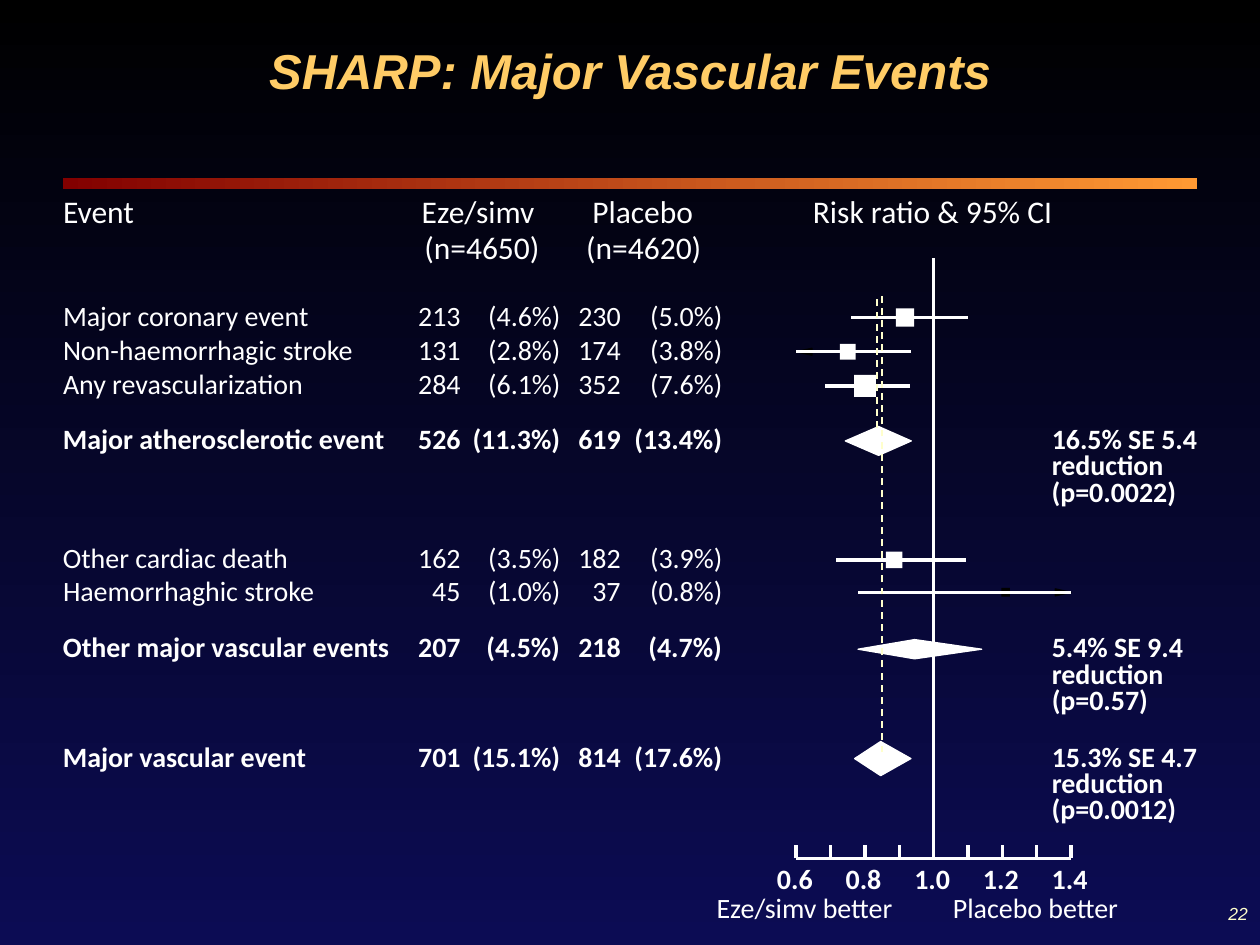
"""Build a forest plot slide of major vascular events."""
from lxml import etree
from pptx import Presentation
from pptx.dml.color import RGBColor
from pptx.enum.dml import MSO_LINE
from pptx.enum.shapes import MSO_CONNECTOR, MSO_SHAPE
from pptx.enum.text import MSO_ANCHOR, PP_ALIGN
from pptx.oxml.ns import qn
from pptx.util import Pt

COLORS = {"white": "FFFFFF", "black": "000000", "navy": "0C0C54", "maroon": "820000",
          "orange": "FF9933", "gold": "FFCC66", "cream": "FFFFCC"}

TITLE = "SHARP: Major Vascular Events"
HEADERS = [("Risk ratio & 95% CI", 464.5, 110, 137.5), ("Event", 36, 110, 43),
           ("Placebo", 338.5, 110, 60), ("Eze/simv", 241, 110, 66),
           ("(n=4620)", 335, 130.5, 66.5), ("(n=4650)", 242.5, 130.5, 66.5)]

# label, label width, top, four cells, (low, ratio, high), marker size, marker kind, reduction
EVENTS = [
    ("Major coronary event", 145.5, 170.5, ("213", "(4.6%)", "230", "(5.0%)"),
     (0.76, 0.917, 1.1), 10.5, "square", ()),
    ("Non-haemorrhagic stroke", 170.5, 190, ("131", "(2.8%)", "174", "(3.8%)"),
     (0.6, 0.75, 0.935), 9, "square", ()),
    ("Any revascularization", 142.5, 209.5, ("284", "(6.1%)", "352", "(7.6%)"),
     (0.685, 0.8, 0.93), 12.5, "square", ()),
    ("Major atherosclerotic event", 188.5, 241, ("526", "(11.3%)", "619", "(13.4%)"),
     (0.743, 0.84, 0.935), 16.5, "diamond", ("16.5% SE 5.4", "reduction", "(p=0.0022)")),
    ("Other cardiac death", 133, 309, ("162", "(3.5%)", "182", "(3.9%)"),
     (0.717, 0.885, 1.095), 9.5, "square", ()),
    ("Haemorrhaghic stroke", 148.5, 327.5, ("45", "(1.0%)", "37", "(0.8%)"),
     (0.78, 1.21, 1.4), 5, "dark square", ()),
    ("Other major vascular events", 191.5, 360, ("207", "(4.5%)", "218", "(4.7%)"),
     (0.78, 0.945, 1.14), 11, "diamond", ("5.4% SE 9.4", "reduction", "(p=0.57)")),
    ("Major vascular event", 144, 422.5, ("701", "(15.1%)", "814", "(17.6%)"),
     (0.77, 0.846, 0.934), 19.5, "diamond", ("15.3% SE 4.7", "reduction", "(p=0.0012)")),
]
CELL_RIGHTS = (267, 324, 358.5, 416.5)
CELL_WIDTHS = {2: (20, 20), 3: (28, 28), 6: (45, 46), 7: (54, 54)}
REDUCTION_WIDTHS = {8: 59, 9: 68, 10: 75, 11: 79, 12: 87}
AXIS_MIN, AXIS_MAX, AXIS_LEFT, AXIS_UNIT, AXIS_TOP = 0.6, 1.4, 455, 196.25, 490.5
AXIS_LABELS = ("0.6", "0.8", "1.0", "1.2", "1.4")
CAPTIONS = [("Eze/simv better", 406, 107.5), ("Placebo better", 525.5, 132.5)]
DASHED_LINES = [(501, 244.5, 169), (504, 430, 166.5)]


def color(name):
    return RGBColor.from_string(COLORS[name])


def axis_x(ratio):
    return AXIS_LEFT + (ratio - AXIS_MIN) * AXIS_UNIT


def fill_gradient(fill, first, last, angle):
    fill.gradient()
    fill.gradient_angle = angle
    for stop, name in zip(fill.gradient_stops, (first, last)):
        stop.color.rgb = color(name)


def write(frame, text, size, name="white", font="Calibri", bold=False, italic=False,
          align=PP_ALIGN.LEFT):
    paragraph = frame.paragraphs[0]
    paragraph.alignment = align
    run = paragraph.add_run()
    run.text = text
    run.font.name, run.font.size = font, Pt(size)
    run.font.bold, run.font.italic = bold, italic
    run.font.color.rgb = color(name)


def add_text(slide, text, left, top, width, size=16, **style):
    box = slide.shapes.add_textbox(Pt(left), Pt(top), Pt(width), Pt(size * 1.2))
    frame = box.text_frame
    frame.word_wrap = True
    frame.margin_left = frame.margin_right = frame.margin_top = frame.margin_bottom = 0
    write(frame, text, size, **style)


def add_line(slide, x1, y1, x2, y2, name="white", width=0, dash=None):
    line = slide.shapes.add_connector(MSO_CONNECTOR.STRAIGHT, Pt(x1), Pt(y1), Pt(x2), Pt(y2))
    line.line.color.rgb = color(name)
    line.line.width = Pt(width)
    if dash:
        line.line.dash_style = dash
    etree.SubElement(line._element.spPr, qn("a:effectLst"))


def add_rectangle(slide, left, top, width, height):
    shape = slide.shapes.add_shape(MSO_SHAPE.RECTANGLE, Pt(left), Pt(top), Pt(width), Pt(height))
    shape.shadow.inherit = False
    shape.line.fill.background()
    return shape


def add_polygon(slide, points, name):
    start, *rest = [(Pt(x), Pt(y)) for x, y in points]
    builder = slide.shapes.build_freeform(*start)
    builder.add_line_segments(rest, close=True)
    shape = builder.convert_to_shape()
    shape.shadow.inherit = False
    shape.fill.solid()
    shape.fill.fore_color.rgb = shape.line.color.rgb = color(name)
    shape.line.width = Pt(0)


def add_estimate(slide, interval, middle, size, kind):
    low, ratio, high = (axis_x(value) for value in interval)
    half = size / 2
    if kind == "diamond":
        add_polygon(slide, [(ratio, middle - half), (high, middle), (ratio, middle + half),
                            (low, middle)], "white")
        return
    marker = add_rectangle(slide, ratio - half, middle - half, size, size)
    marker.fill.solid()
    marker.fill.fore_color.rgb = color("black" if kind == "dark square" else "white")
    for value, tip, step in ((interval[0], low, 9), (interval[2], high, -9)):
        if value in (AXIS_MIN, AXIS_MAX):
            add_polygon(slide, [(tip, middle), (tip + step, middle - 2),
                                (tip + step, middle + 2)], "black")
    add_line(slide, low, middle, high, middle)


def add_event(slide, label, width, top, cells, interval, size, kind, reduction):
    bold = kind == "diamond"
    add_text(slide, label, 36, top, width, bold=bold)
    for text, right in zip(cells, CELL_RIGHTS):
        cell_width = CELL_WIDTHS[len(text)][bold]
        add_text(slide, text, right - cell_width, top, cell_width, bold=bold)
    for index, text in enumerate(reduction):
        add_text(slide, text, 601, top + 15 * index, REDUCTION_WIDTHS[len(text)], bold=True)
    add_estimate(slide, interval, top + 11, size, kind)


def add_axis(slide):
    add_line(slide, axis_x(1), 147.5, axis_x(1), 488)
    add_line(slide, AXIS_LEFT, AXIS_TOP, axis_x(AXIS_MAX), AXIS_TOP)
    for index in range(9):
        x = axis_x(AXIS_MIN + index / 10)
        add_line(slide, x, AXIS_TOP, x, AXIS_TOP - 7.5)
    for text in AXIS_LABELS:
        add_text(slide, text, axis_x(float(text)) - 11, 492.5, 24.5, bold=True)
    for x, bottom, top in DASHED_LINES:
        add_line(slide, x, bottom, x, top, "cream", 1, MSO_LINE.DASH)
    for text, left, width in CAPTIONS:
        add_text(slide, text, left, 509, width, align=PP_ALIGN.CENTER)


def main():
    presentation = Presentation()
    presentation.slide_width, presentation.slide_height = Pt(720), Pt(540)
    slide = presentation.slides.add_slide(presentation.slide_layouts[5])
    fill_gradient(slide.background.fill, "black", "navy", 270)
    bar = add_rectangle(slide, 36, 102, 648, 6)
    fill_gradient(bar.fill, "maroon", "orange", 0)
    title = slide.shapes.title
    title.left, title.top, title.width, title.height = Pt(0), Pt(1.5), Pt(720), Pt(77)
    title.text_frame.vertical_anchor = MSO_ANCHOR.MIDDLE
    write(title.text_frame, TITLE, 28, "gold", "Arial", True, True, PP_ALIGN.CENTER)
    add_text(slide, "22", 569.5, 516, 143.5, 10, name="cream", font="Arial", italic=True,
             align=PP_ALIGN.RIGHT)
    for text, left, top, width in HEADERS:
        add_text(slide, text, left, top, width, 18)
    for event in EVENTS:
        add_event(slide, *event)
    add_axis(slide)
    presentation.save("out.pptx")


if __name__ == "__main__":
    main()
